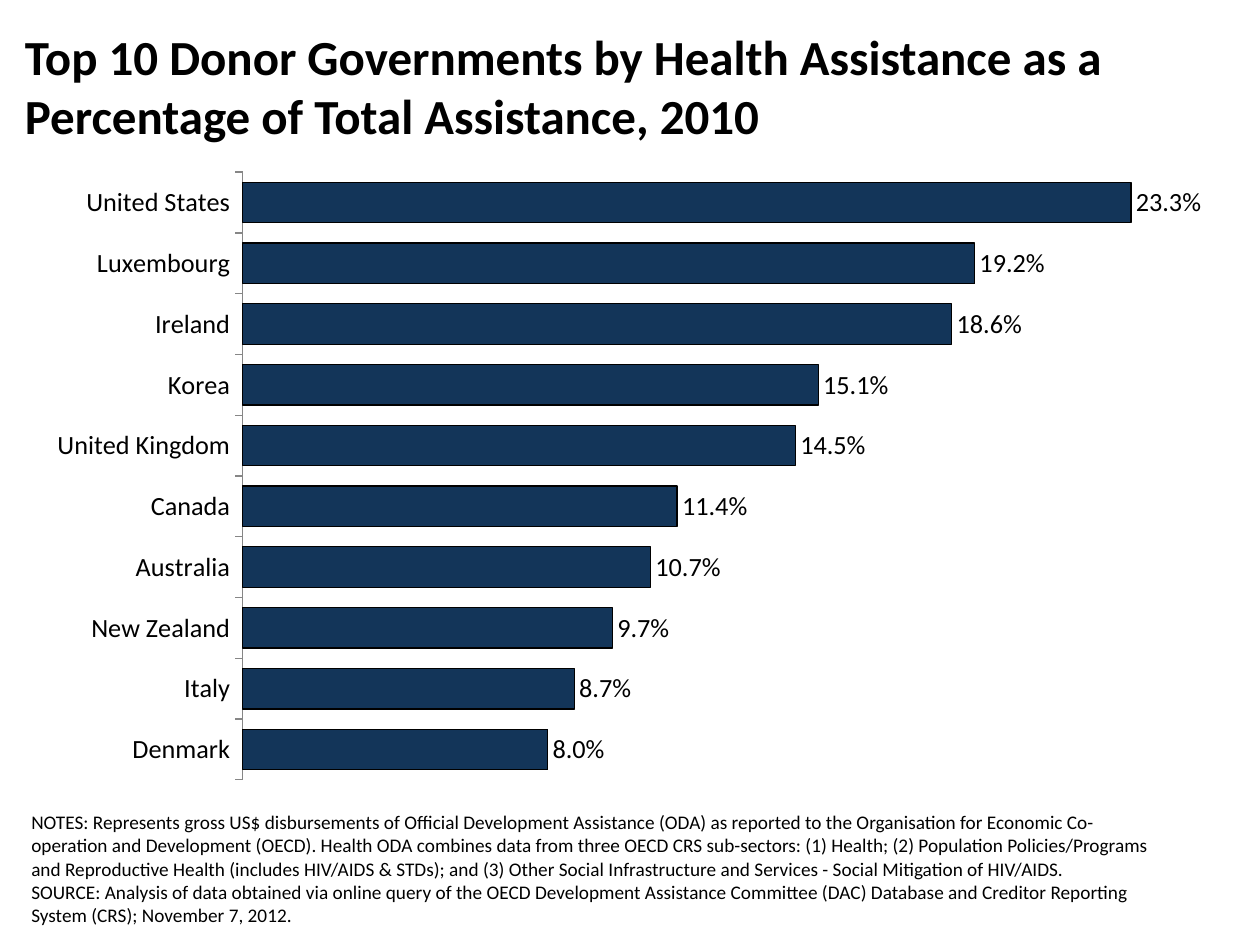
"""Build a slide ranking donor governments by health share of assistance."""
from lxml import etree
from pptx import Presentation
from pptx.chart import data as cd
from pptx.dml.color import RGBColor
from pptx.enum import chart as ce, text as te
from pptx.oxml import ns
from pptx.util import Pt

BLACK = RGBColor(0, 0, 0)
NAVY = RGBColor(0x13, 0x35, 0x59)
GREY = RGBColor(0x86, 0x86, 0x86)
FACE = "Calibri"
TITLE = "Top 10 Donor Governments by Health Assistance as a Percentage of Total Assistance, 2010"
NOTES = (
    "NOTES: Represents gross US$ disbursements of Official Development Assistance (ODA) "
    "as reported to the Organisation for Economic Co-operation and Development (OECD). "
    "Health ODA combines data from three OECD CRS sub-sectors: (1) Health; (2) Population "
    "Policies/Programs and Reproductive Health (includes HIV/AIDS & STDs); and (3) Other "
    "Social Infrastructure and Services - Social Mitigation of HIV/AIDS.\n"
    "SOURCE: Analysis of data obtained via online query of the OECD Development Assistance "
    "Committee (DAC) Database and Creditor Reporting System (CRS); November 7, 2012."
)
SHARES = {
    "Denmark": 0.08,
    "Italy": 0.087,
    "New Zealand": 0.097,
    "Australia": 0.107,
    "Canada": 0.114,
    "United Kingdom": 0.145,
    "Korea": 0.151,
    "Ireland": 0.186,
    "Luxembourg": 0.192,
    "United States": 0.233,
}


def style(font, size, bold=False):
    font.name = FACE
    font.size = Pt(size)
    font.bold = bold
    font.color.rgb = BLACK


def add_text(words, box, size, anchor, bold=False):
    frame = slide.shapes.add_textbox(*map(Pt, box)).text_frame
    frame.word_wrap = True
    frame.vertical_anchor = anchor
    frame.text = words
    for para in frame.paragraphs:
        for run in para.runs:
            style(run.font, size, bold)


prs = Presentation()
prs.slide_width = Pt(720)
prs.slide_height = Pt(540)
slide = prs.slides.add_slide(prs.slide_layouts[6])

data = cd.CategoryChartData(number_format="0.0%")
data.categories = list(SHARES)
data.add_series("Series 1", list(SHARES.values()))
box = map(Pt, (13.7, 95.8, 705.6, 367.9))
chart = slide.shapes.add_chart(ce.XL_CHART_TYPE.BAR_CLUSTERED, *box, data).chart
chart.has_legend = False
chart.has_title = False
style(chart.font, 18)

names = chart.category_axis
names.major_tick_mark = ce.XL_TICK_MARK.OUTSIDE
names.format.line.color.rgb = GREY
style(names.tick_labels.font, 15)
scale = chart.value_axis
scale.minimum_scale = 0
scale.maximum_scale = 0.25
scale.has_major_gridlines = False
scale.visible = False

plot = chart.plots[0]
plot.gap_width = 50
plot.vary_by_categories = False
bars = plot.series[0].format
bars.fill.solid()
bars.fill.fore_color.rgb = NAVY
bars.line.color.rgb = BLACK
bars.line.width = Pt(0.75)
plot.has_data_labels = True
labels = plot.data_labels
labels.show_value = True
labels.number_format = "0.0%"
labels.number_format_is_linked = False
labels.position = ce.XL_LABEL_POSITION.OUTSIDE_END
style(labels.font, 15)

area = chart.element.find(".//" + ns.qn("c:plotArea"))
for old in area.findall(ns.qn("c:layout")):
    area.remove(old)
layout = etree.Element(ns.qn("c:layout"))
area.insert(0, layout)
manual = etree.SubElement(layout, ns.qn("c:manualLayout"))
rules = {"layoutTarget": "inner", "xMode": "edge", "yMode": "edge",
         "x": 0.177, "y": 0.007, "w": 0.772, "h": 0.944}
for key, val in rules.items():
    etree.SubElement(manual, ns.qn("c:" + key)).set("val", str(val))

add_text(NOTES, (10.8, 489.6, 655.2, 43.2), 11, te.MSO_ANCHOR.BOTTOM)
add_text(TITLE, (7.2, 11.5, 705.6, 72), 28, te.MSO_ANCHOR.TOP, True)

prs.save("out.pptx")
